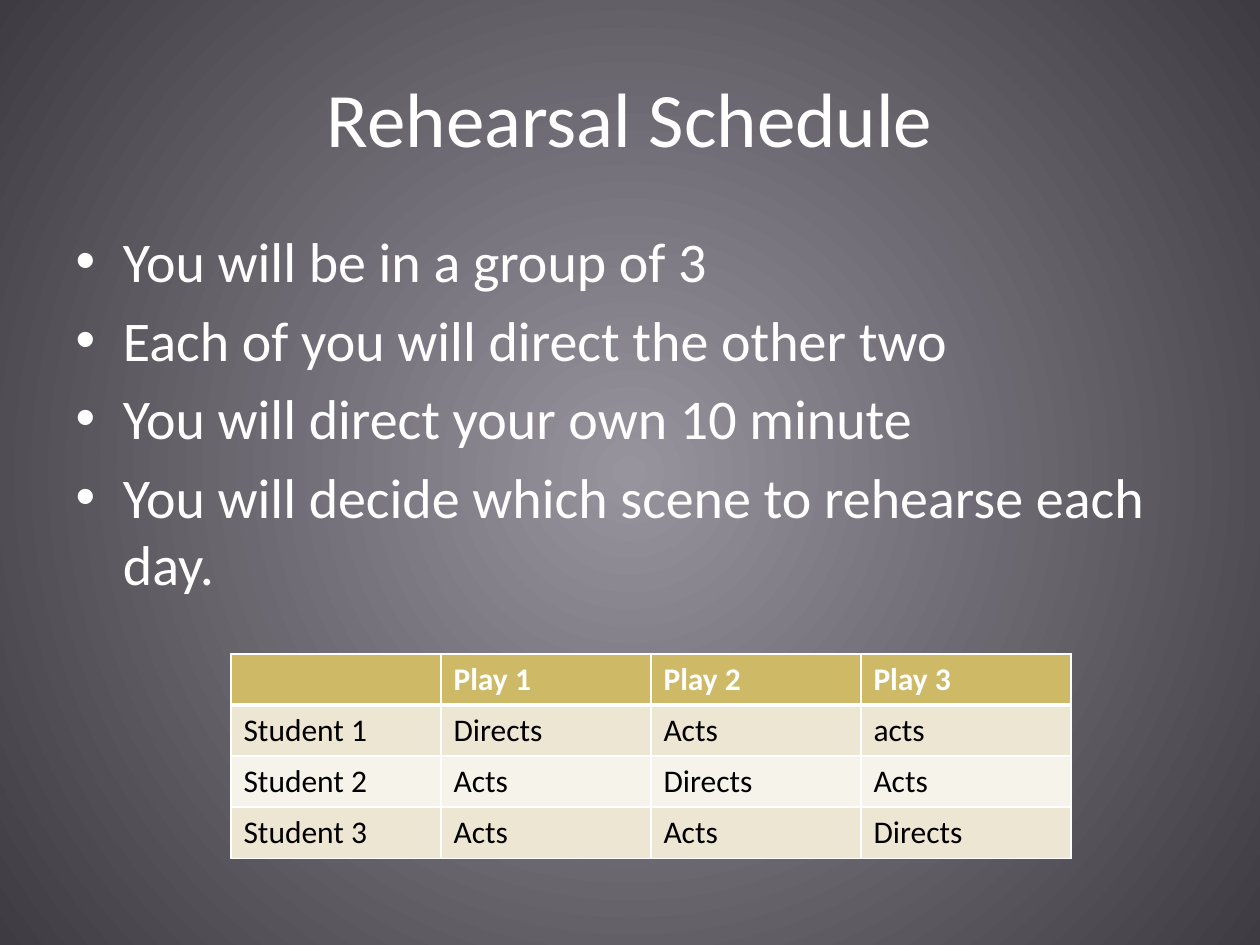
from dataclasses import dataclass

from lxml import etree
from pptx import Presentation, util as u
from pptx.dml.color import RGBColor
from pptx.enum import text
from pptx.oxml import ns


@dataclass(frozen=True)
class Theme:
    font: str = "Calibri"
    light: str = "FFFFFF"
    dark: str = "000000"
    glow: str = "97949D"
    edge: str = "3E3B42"
    header: str = "CEB966"
    bands: tuple = ("EDE6D3", "F6F3EA")
    title_size: int = 44
    body_size: int = 32
    table_size: int = 18
    rule: int = 1
    header_rule: int = 3


THEME = Theme()
WIDTH, HEIGHT = u.Inches(10), u.Inches(7.5)
TITLE_BOX = (0.05, 0.04, 0.9, 0.1667)
BODY_BOX = (0.05, 0.2333, 0.9, 0.66)
SCHEDULE_BOX = (0.1833, 0.692, 0.6667, 0.216)

POINTS = [
    "You will be in a group of 3",
    "Each of you will direct the other two",
    "You will direct your own 10 minute",
    "You will decide which scene to rehearse each day.",
]
SCHEDULE = [
    ["", "Play 1", "Play 2", "Play 3"],
    ["Student 1", "Directs", "Acts", "acts"],
    ["Student 2", "Acts", "Directs", "Acts"],
    ["Student 3", "Acts", "Acts", "Directs"],
]


def place(box):
    return [round(share * side) for share, side in zip(box, (WIDTH, HEIGHT) * 2)]


def add(parent, tag, **attributes):
    return etree.SubElement(parent, ns.qn(tag), attributes)


def format_runs(paragraph, size, color, bold=False):
    style = {"name": THEME.font, "size": u.Pt(size), "bold": bold}
    for run in paragraph.runs:
        for key, value in style.items():
            setattr(run.font, key, value)
        run.font.color.rgb = RGBColor.from_string(color)


def paint_background(slide):
    fill = slide.background.fill
    fill.gradient()
    for stop, color in zip(fill.gradient_stops, (THEME.glow, THEME.edge)):
        stop.color.rgb = RGBColor.from_string(color)
    gradient = slide.background._cSld.find(".//" + ns.qn("a:gradFill"))
    gradient.remove(gradient.find(ns.qn("a:lin")))
    for stop, position in zip(gradient.iter(ns.qn("a:gs")), ("0", "100000")):
        stop.set("pos", position)
    center = add(gradient, "a:path", path="circle")
    add(center, "a:fillToRect", **dict.fromkeys("ltrb", "50000"))


def fill_placeholder(holder, box, lines, size, **paragraph_format):
    holder.left, holder.top, holder.width, holder.height = place(box)
    holder.text_frame.text = "\n".join(lines)
    for paragraph in holder.text_frame.paragraphs:
        for key, value in paragraph_format.items():
            setattr(paragraph, key, value)
        format_runs(paragraph, size, THEME.light)


def rule_cell(cell, top, bottom):
    properties = cell._tc.get_or_add_tcPr()
    widths = {"L": THEME.rule, "R": THEME.rule, "T": top, "B": bottom}
    for side, width in widths.items():
        line = add(properties, f"a:ln{side}", w=str(u.Pt(width)))
        add(add(line, "a:solidFill"), "a:srgbClr", val=THEME.light)


def add_schedule(slide, box, entries):
    left, top, width, height = place(box)
    rows, columns = len(entries), len(entries[0])
    schedule = slide.shapes.add_table(rows, columns, left, top, width, height).table
    for row, labels in enumerate(entries):
        is_header = row == 0
        fill = THEME.header if is_header else THEME.bands[(row - 1) % 2]
        ink = THEME.light if is_header else THEME.dark
        top_rule = THEME.header_rule if row == 1 else THEME.rule
        bottom_rule = THEME.header_rule if is_header else THEME.rule
        for column, label in enumerate(labels):
            cell = schedule.cell(row, column)
            cell.text = label
            rule_cell(cell, top_rule, bottom_rule)
            cell.fill.solid()
            cell.fill.fore_color.rgb = RGBColor.from_string(fill)
            format_runs(cell.text_frame.paragraphs[0], THEME.table_size, ink, is_header)


def build_rehearsal_slide(deck):
    slide = deck.slides.add_slide(deck.slide_layouts[1])
    paint_background(slide)
    title, body = slide.placeholders
    fill_placeholder(title, TITLE_BOX, ["Rehearsal Schedule"], THEME.title_size,
                     alignment=text.PP_ALIGN.CENTER)
    title.text_frame.vertical_anchor = text.MSO_ANCHOR.MIDDLE
    fill_placeholder(body, BODY_BOX, POINTS, THEME.body_size)
    for paragraph in body.text_frame.paragraphs:
        properties = paragraph._p.get_or_add_pPr()
        add(properties, "a:buClr").append(
            etree.Element(ns.qn("a:srgbClr"), val=THEME.light))
        add(properties, "a:buChar", char="•")
    add_schedule(slide, SCHEDULE_BOX, SCHEDULE)


def main():
    deck = Presentation()
    deck.slide_width, deck.slide_height = WIDTH, HEIGHT
    build_rehearsal_slide(deck)
    deck.save("out.pptx")


if __name__ == "__main__":
    main()
